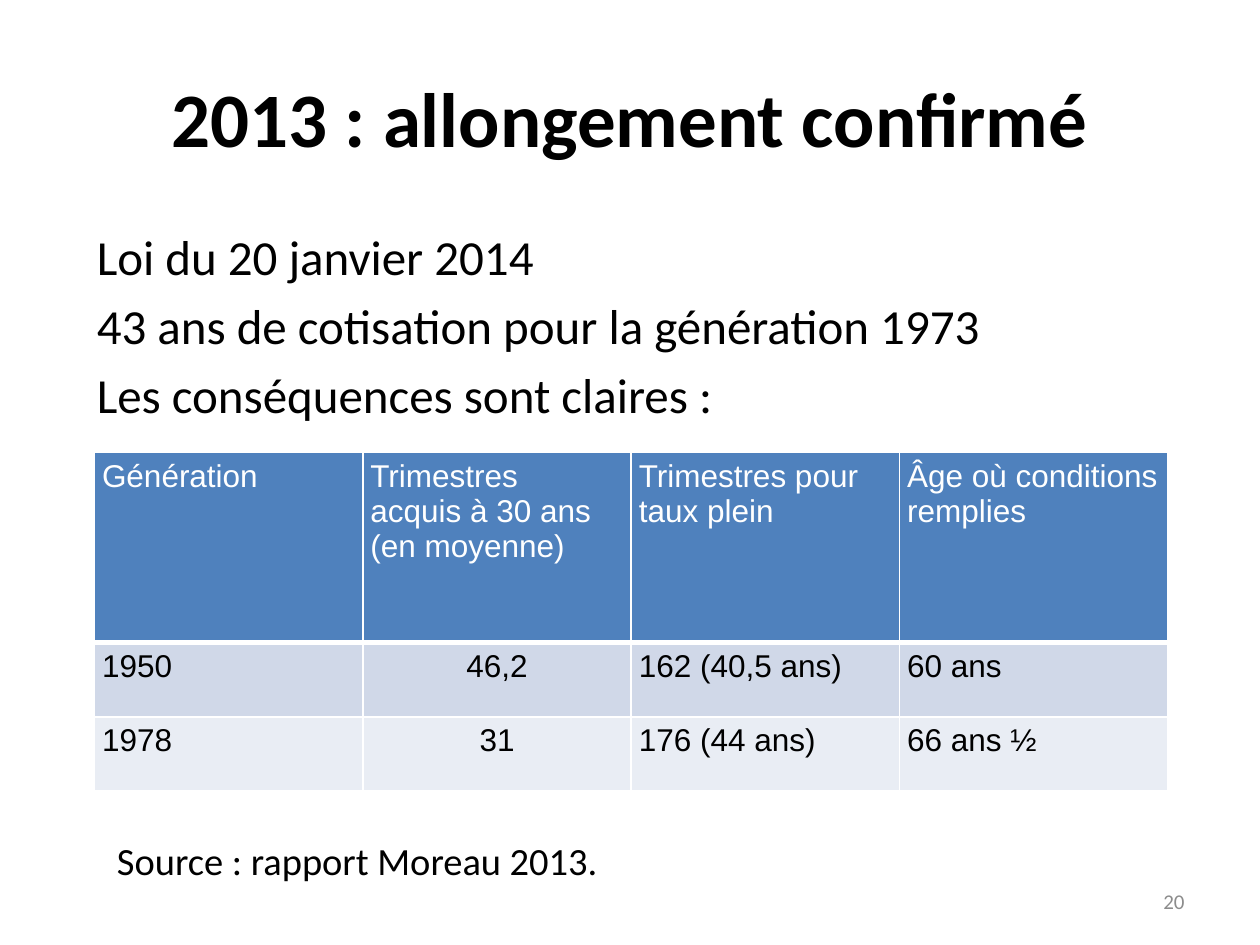
"""Build the slide on the longer contribution period confirmed in 2013."""
from dataclasses import dataclass

from lxml import etree
from pptx import Presentation
from pptx.dml.color import RGBColor
from pptx.enum.text import MSO_ANCHOR, PP_ALIGN
from pptx.oxml.ns import qn
from pptx.util import Inches, Pt

LEFT, CENTER, RIGHT = PP_ALIGN.LEFT, PP_ALIGN.CENTER, PP_ALIGN.RIGHT
TOP, MIDDLE = MSO_ANCHOR.TOP, MSO_ANCHOR.MIDDLE


@dataclass(frozen=True)
class Theme:
    text_font: str = "Calibri"
    table_font: str = "Arial"
    black: str = "000000"
    white: str = "FFFFFF"
    grey: str = "8C8C8C"
    header: str = "4F81BD"
    bands: tuple = ("D0D8E8", "E9EDF4")
    title: int = 44
    body: int = 28
    source: int = 22
    table: int = 18
    number: int = 12


THEME = Theme()


def format_text(frame, font, size, color, align=LEFT, bold=False, before=0):
    for paragraph in frame.paragraphs:
        paragraph.alignment = align
        paragraph.space_before = Pt(before)
        paragraph.font.name = font
        paragraph.font.size = Pt(size)
        paragraph.font.bold = bold
        paragraph.font.color.rgb = RGBColor.from_string(color)


def add_border(cell, position, side, width):
    line = etree.Element(qn(f"a:ln{side}"), w=str(Pt(width)))
    fill = etree.SubElement(line, qn("a:solidFill"))
    etree.SubElement(fill, qn("a:srgbClr"), val=THEME.white)
    cell._tc.get_or_add_tcPr().insert(position, line)


presentation = Presentation()
presentation.slide_width = Inches(10)
presentation.slide_height = Inches(7.5)
slide = presentation.slides.add_slide(presentation.slide_layouts[6])

law_points = "\n".join([
    "Loi du 20 janvier 2014",
    "43 ans de cotisation pour la génération 1973",
    "Les conséquences sont claires :",
])
texts = [
    ("2013 : allongement confirmé", (0.5, 0.3, 9, 1.25), THEME.title, THEME.black, CENTER, MIDDLE, True, 0),
    (law_points, (0.67, 1.75, 8.83, 1.92), THEME.body, THEME.black, LEFT, TOP, False, 5.6),
    ("20", (7.17, 6.95, 2.33, 0.4), THEME.number, THEME.grey, RIGHT, MIDDLE, False, 0),
    ("Source : rapport Moreau 2013.", (0.83, 6.59, 4.42, 0.7), THEME.source, THEME.black, LEFT, TOP, False, 4.4),
]
for text, place, size, color, align, anchor, bold, before in texts:
    frame = slide.shapes.add_textbox(*map(Inches, place)).text_frame
    frame.word_wrap = True
    frame.vertical_anchor = anchor
    frame.text = text
    format_text(frame, THEME.text_font, size, color, align, bold, before)

generations = [
    ["Génération", "Trimestres\nacquis à 30 ans\n(en moyenne)",
     "Trimestres pour taux plein", "Âge où conditions\nremplies"],
    ["1950", "46,2", "162 (40,5 ans)", "60 ans"],
    ["1978", "31", "176 (44 ans)", "66 ans ½"],
]
row_heights = [1.51, 0.59, 0.59]
row_fills = [THEME.header, *THEME.bands]
table = slide.shapes.add_table(
    len(generations), len(generations[0]),
    Inches(0.75), Inches(3.59), Inches(8.52), Inches(sum(row_heights))).table
for column in table.columns:
    column.width = Inches(2.13)

for row, values in enumerate(generations):
    is_header = row == 0
    table.rows[row].height = Inches(row_heights[row])
    for column, value in enumerate(values):
        cell = table.cell(row, column)
        cell.text = value
        cell.margin_left = cell.margin_right = Inches(0.06)
        cell.margin_top = cell.margin_bottom = Inches(0.05)
        cell.fill.solid()
        cell.fill.fore_color.rgb = RGBColor.from_string(row_fills[row])
        for position, side in enumerate("LRTB"):
            add_border(cell, position, side, 3 if is_header and side == "B" else 1)
        format_text(cell.text_frame, THEME.table_font, THEME.table,
                    THEME.white if is_header else THEME.black,
                    CENTER if column == 1 and not is_header else LEFT)

presentation.save("out.pptx")
